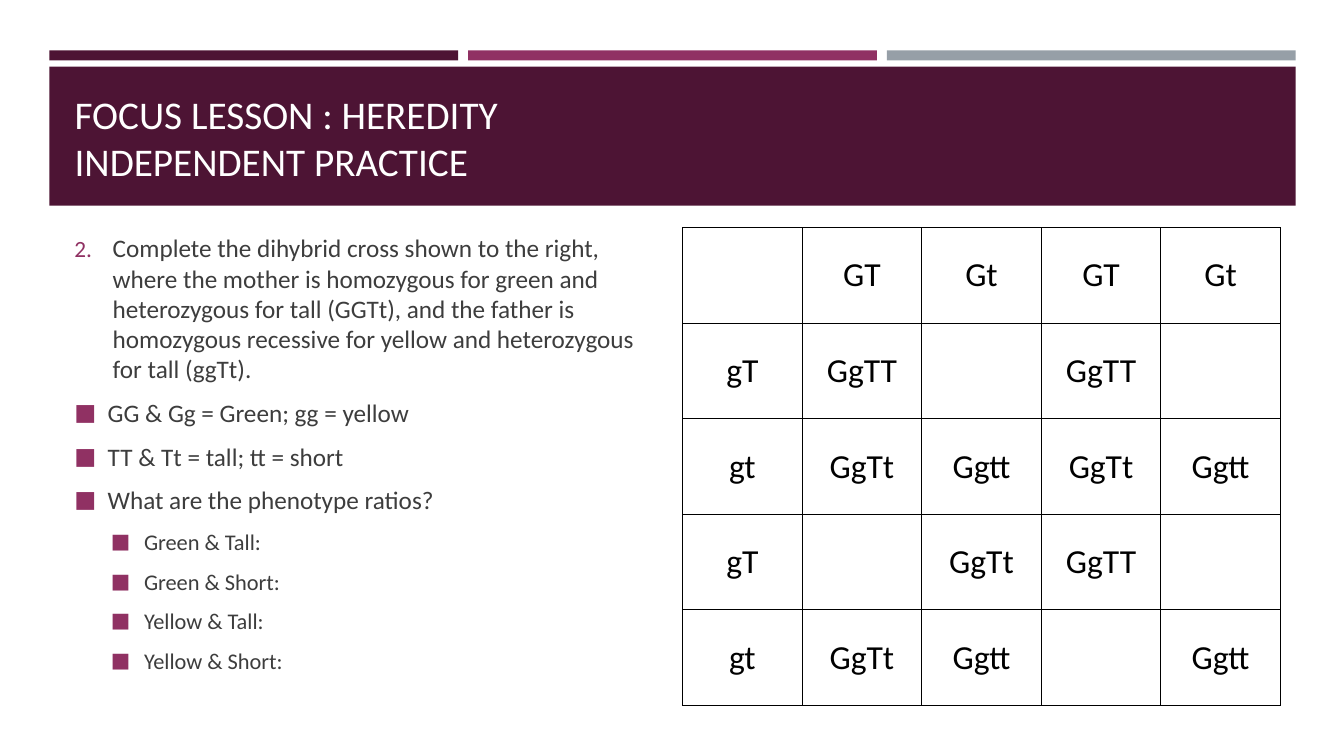
from lxml import etree
from pptx import Presentation
from pptx.dml.color import RGBColor
from pptx.enum.shapes import MSO_SHAPE
from pptx.enum.text import MSO_ANCHOR, MSO_AUTO_SIZE, PP_ALIGN
from pptx.oxml.ns import qn
from pptx.util import Inches, Pt

RECTANGLE = MSO_SHAPE.RECTANGLE
MIDDLE, BOTTOM = MSO_ANCHOR.MIDDLE, MSO_ANCHOR.BOTTOM
LEFT, CENTER = PP_ALIGN.LEFT, PP_ALIGN.CENTER
NO_AUTOFIT = MSO_AUTO_SIZE.NONE

PLUM = RGBColor(0x4D, 0x14, 0x34)
MAGENTA = RGBColor(0x90, 0x31, 0x63)
GREY = RGBColor(0x96, 0x9F, 0xA7)
INK = RGBColor(0x3D, 0x3D, 0x3D)
WHITE = RGBColor(0xFF, 0xFF, 0xFF)
BLACK = RGBColor(0, 0, 0)
FONT = "Calibri"
TITLE_ONLY = 5

# Page grid, in inches
BAND_LEFT, BAND_WIDTH = 0.49, 12.36
STRIPE_GAP = 0.1
STRIPE_WIDTH = (BAND_WIDTH - 2 * STRIPE_GAP) / 3
TEXT_LEFT, TEXT_WIDTH = 0.64, 12.06
COLUMN_WIDTH, COLUMN_GAP = 5.93, 0.2
CONTENT_TOP, CONTENT_HEIGHT = 2.26, 4.74

TITLE_LINES = ["FOCUS LESSON : HEREDITY", "INDEPENDENT PRACTICE"]
TASK = ("Complete the dihybrid cross shown to the right, where the mother is "
        "homozygous for green and heterozygous for tall (GGTt), and the father is "
        "homozygous recessive for yellow and heterozygous for tall (ggTt).")
HINTS = ["GG & Gg = Green; gg = yellow", "TT & Tt = tall; tt = short",
         "What are the phenotype ratios?"]
PHENOTYPES = ["Green & Tall:", "Green & Short:", "Yellow & Tall:", "Yellow & Short:"]
CROSS = [
    ["", "GT", "Gt", "GT", "Gt"],
    ["gT", "GgTT", "", "GgTT", ""],
    ["gt", "GgTt", "Ggtt", "GgTt", "Ggtt"],
    ["gT", "", "GgTt", "GgTT", ""],
    ["gt", "GgTt", "Ggtt", "", "Ggtt"],
]


def inches(*lengths):
    return [Inches(length) for length in lengths]


def add_run(para, text, size, color):
    run = para.add_run()
    run.text = text
    run.font.name = FONT
    run.font.size = Pt(size)
    run.font.color.rgb = color


def add_bar(page, left, top, width, height, color):
    bar = page.shapes.add_shape(RECTANGLE, *inches(left, top, width, height))
    bar.shadow.inherit = False
    bar.fill.solid()
    bar.fill.fore_color.rgb = color
    bar.line.fill.background()


def add_header(page):
    for index, color in enumerate([PLUM, MAGENTA, GREY]):
        left = BAND_LEFT + index * (STRIPE_WIDTH + STRIPE_GAP)
        add_bar(page, left, 0.5, STRIPE_WIDTH, 0.1, color)
    add_bar(page, BAND_LEFT, 0.66, BAND_WIDTH, 1.38, PLUM)


def set_title(page):
    """Fill the title placeholder and bring it in front of the band."""
    title = page.shapes.title
    title.left, title.top, title.width, title.height = inches(
        TEXT_LEFT, 0.8, TEXT_WIDTH, 1.08)
    title.element.getparent().append(title.element)
    frame = title.text_frame
    frame.word_wrap = True
    frame.auto_size = NO_AUTOFIT
    frame.vertical_anchor = BOTTOM
    para = frame.paragraphs[0]
    para.alignment = LEFT
    for index, line in enumerate(TITLE_LINES):
        if index:
            para.add_line_break()
        add_run(para, line, 28, WHITE)


def set_bullet(para, margin, hanging, tag, **marker):
    """Give the paragraph a magenta marker; tag is a:buChar or a:buAutoNum."""
    props = para._p.get_or_add_pPr()
    props.set("marL", str(Inches(margin)))
    props.set("indent", str(-Inches(hanging)))
    color = etree.SubElement(props, qn("a:buClr"))
    etree.SubElement(color, qn("a:srgbClr"), val=str(MAGENTA))
    etree.SubElement(props, qn("a:buSzPct"), val="92000")
    etree.SubElement(props, qn("a:buFont"), typeface=FONT)
    etree.SubElement(props, qn(tag), **marker)


def add_questions(page):
    box = page.shapes.add_textbox(
        *inches(TEXT_LEFT, CONTENT_TOP, COLUMN_WIDTH, CONTENT_HEIGHT))
    frame = box.text_frame
    frame.word_wrap = True
    square = ("a:buChar", {"char": "■"})
    number = ("a:buAutoNum", {"type": "arabicPeriod", "startAt": "2"})
    items = [(TASK, 0, 18, 0.38, 0.38, number)]
    items += [(hint, 0, 18, 0.33, 0.33, square) for hint in HINTS]
    items += [(name, 1, 16, 0.69, 0.33, square) for name in PHENOTYPES]
    for index, (text, level, size, margin, hanging, (tag, marker)) in enumerate(items):
        para = frame.add_paragraph() if index else frame.paragraphs[0]
        para.level = level
        para.space_before = Pt(0.2 * size)
        para.space_after = Pt(6)
        set_bullet(para, margin, hanging, tag, **marker)
        add_run(para, text, size, INK)


def set_borders(cell):
    props = cell._tc.get_or_add_tcPr()
    for index, side in enumerate(["a:lnL", "a:lnR", "a:lnT", "a:lnB"]):
        line = etree.Element(qn(side), w=str(Pt(1)))
        fill = etree.SubElement(line, qn("a:solidFill"))
        etree.SubElement(fill, qn("a:srgbClr"), val=str(BLACK))
        props.insert(index, line)


def add_cross(page):
    left = TEXT_LEFT + COLUMN_WIDTH + COLUMN_GAP
    table = page.shapes.add_table(
        len(CROSS), len(CROSS[0]),
        *inches(left, CONTENT_TOP, COLUMN_WIDTH, CONTENT_HEIGHT)).table
    table.first_row = False
    table.horz_banding = False
    for row, genotypes in enumerate(CROSS):
        for column, genotype in enumerate(genotypes):
            cell = table.cell(row, column)
            cell.fill.background()
            cell.vertical_anchor = MIDDLE
            set_borders(cell)
            if genotype:
                para = cell.text_frame.paragraphs[0]
                para.alignment = CENTER
                add_run(para, genotype, 24, BLACK)


def main():
    deck = Presentation()
    deck.slide_width, deck.slide_height = inches(13.33, 7.5)
    page = deck.slides.add_slide(deck.slide_layouts[TITLE_ONLY])
    add_header(page)
    set_title(page)
    add_cross(page)
    add_questions(page)
    deck.save("out.pptx")


if __name__ == "__main__":
    main()
